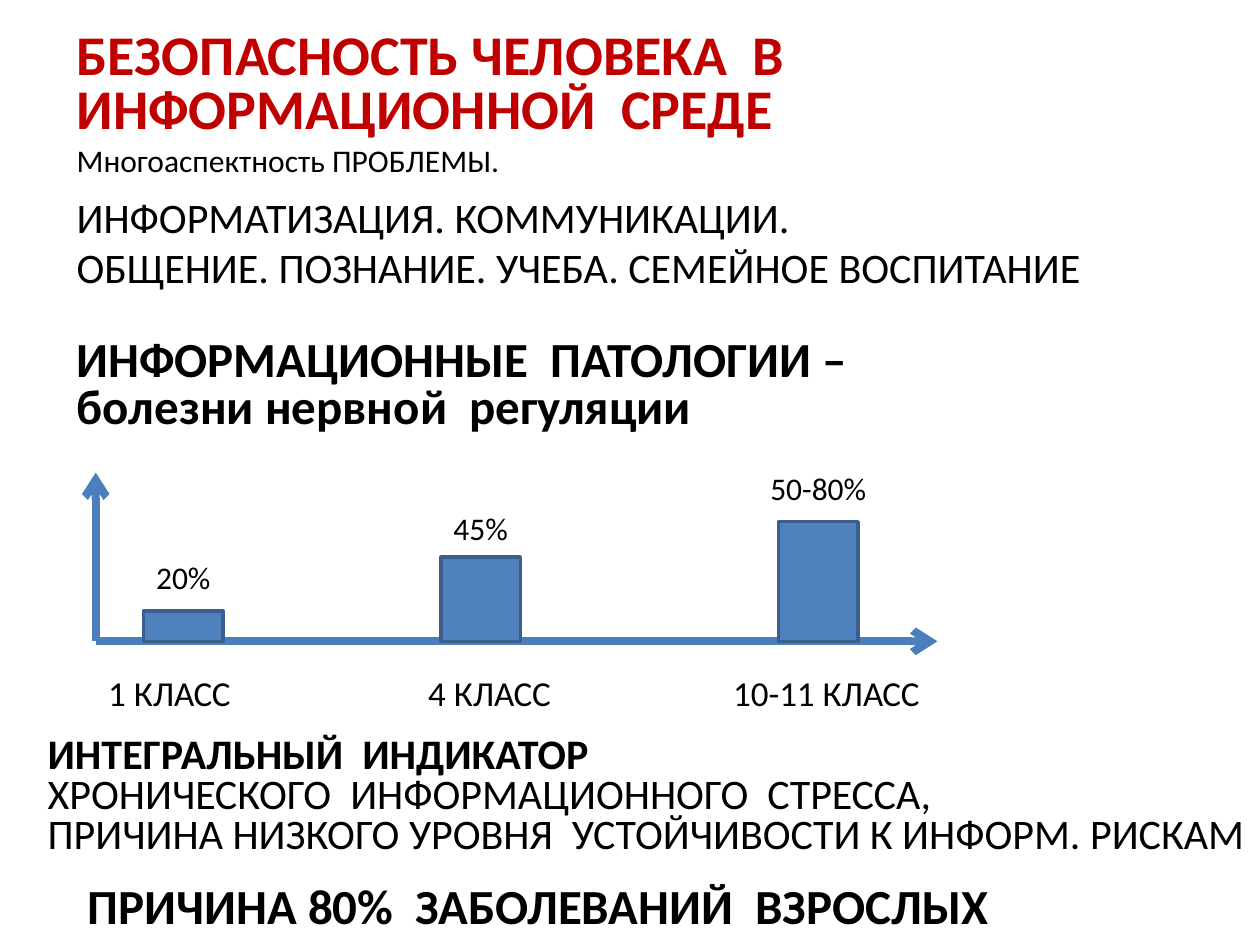
from lxml import etree
from pptx import Presentation
from pptx.dml.color import RGBColor
from pptx.enum import shapes, text
from pptx.oxml.ns import qn
from pptx.util import Inches, Pt

BLACK, RED = "000000", "C00000"
AXIS, BAR_FILL, BAR_LINE = "4B7EBC", "4F81BD", "3A5F8C"

# Content: each paragraph is (text, size, bold, colour, line spacing, space before)
TEXT_BOXES = [
    ((0.51, 0.21, 8.98, 2.58), True, [
        ("БЕЗОПАСНОСТЬ ЧЕЛОВЕКА  В  ИНФОРМАЦИОННОЙ  СРЕДЕ", 32, True, RED, 0.8, 0),
        ("ИНФОРМАТИЗАЦИЯ. КОММУНИКАЦИИ.", 24, False, BLACK, 1, 29.3),
        ("ОБЩЕНИЕ. ПОЗНАНИЕ. УЧЕБА. СЕМЕЙНОЕ ВОСПИТАНИЕ", 24, False, BLACK, 1, 0),
    ]),
    ((0.51, 1.07, 3.71, 0.4), False, [
        ("Многоаспектность ПРОБЛЕМЫ.", 18, False, BLACK, 1, 0),
    ]),
    ((0.51, 2.65, 6.38, 0.86), False, [
        ("ИНФОРМАЦИОННЫЕ  ПАТОЛОГИИ –", 28, True, BLACK, 0.8, 0),
        ("болезни нервной  регуляции", 28, True, BLACK, 0.8, 0),
    ]),
    ((0.28, 5.8, 10.16, 1.07), False, [
        ("ИНТЕГРАЛЬНЫЙ  ИНДИКАТОР", 24, True, BLACK, 0.8, 0),
        ("ХРОНИЧЕСКОГО  ИНФОРМАЦИОННОГО  СТРЕССА,", 24, False, BLACK, 0.8, 0),
        ("ПРИЧИНА НИЗКОГО УРОВНЯ  УСТОЙЧИВОСТИ К ИНФОРМ. РИСКАМ",
         24, False, BLACK, 0.8, 0),
    ]),
    ((0.6, 6.9, 7.43, 0.57), False, [
        ("ПРИЧИНА 80%  ЗАБОЛЕВАНИЙ  ВЗРОСЛЫХ", 28, True, BLACK, 1, 0),
    ]),
]
# Bars: value, left, height, label top, label width
BARS = [
    ("20%", 1.14, 0.24, 4.38, 0.64),
    ("45%", 3.5, 0.67, 3.99, 0.64),
    ("50-80%", 6.18, 0.95, 3.67, 0.97),
]
CLASSES = ["1 КЛАСС", "4 КЛАСС", "10-11 КЛАСС"]
CLASS_TABS = [2.54, 4.96]
ORIGIN_X, ORIGIN_Y = 0.76, 5.09
AXIS_ENDS = [(7.44, ORIGIN_Y), (ORIGIN_X, 3.75)]
BAR_WIDTH = 0.63


def colour(value):
    return RGBColor.from_string(value)


def add_text(slide, box, paragraphs, wrap=False, tabs=(), centred=False):
    frame = slide.shapes.add_textbox(*map(Inches, box)).text_frame
    frame.word_wrap = wrap
    for index, (words, size, bold, ink, spacing, before) in enumerate(paragraphs):
        paragraph = frame.paragraphs[0] if index == 0 else frame.add_paragraph()
        paragraph.text = words
        paragraph.line_spacing = spacing
        if before:
            paragraph.space_before = Pt(before)
        if centred:
            paragraph.alignment = text.PP_ALIGN.CENTER
        if tabs:
            tab_list = etree.SubElement(paragraph._p.get_or_add_pPr(), qn("a:tabLst"))
            for position in tabs:
                etree.SubElement(tab_list, qn("a:tab"), pos=str(Inches(position)), algn="l")
        font = paragraph.font
        font.name, font.size, font.bold = "Calibri", Pt(size), bold
        font.color.rgb = colour(ink)


def add_axis(slide, end):
    axis = slide.shapes.add_connector(
        shapes.MSO_CONNECTOR.STRAIGHT, *map(Inches, (ORIGIN_X, ORIGIN_Y, *end)))
    axis.line.color.rgb = colour(AXIS)
    axis.line.width = Pt(4.5)
    etree.SubElement(axis.line._get_or_add_ln(), qn("a:tailEnd"), type="arrow")
    etree.SubElement(axis._element.spPr, qn("a:effectLst"))


def add_bar(slide, left, height):
    bar = slide.shapes.add_shape(
        shapes.MSO_SHAPE.RECTANGLE,
        *map(Inches, (left, ORIGIN_Y - height, BAR_WIDTH, height)))
    bar.shadow.inherit = False
    bar.fill.solid()
    bar.fill.fore_color.rgb = colour(BAR_FILL)
    bar.line.color.rgb = colour(BAR_LINE)
    bar.line.width = Pt(2)


def main():
    presentation = Presentation()
    presentation.slide_width, presentation.slide_height = Inches(10), Inches(7.5)
    slide = presentation.slides.add_slide(presentation.slide_layouts[6])

    # Headings and statements
    for box, wrap, paragraphs in TEXT_BOXES:
        add_text(slide, box, paragraphs, wrap)

    # Diagram: axes, then bars with their values centred above
    for end in AXIS_ENDS:
        add_axis(slide, end)
    for value, left, height, label_top, label_width in BARS:
        add_bar(slide, left, height)
        label_left = left + (BAR_WIDTH - label_width) / 2
        add_text(slide, (label_left, label_top, label_width, 0.4),
                 [(value, 18, False, BLACK, 1, 0)], centred=True)

    # School classes below the horizontal axis
    add_text(slide, (ORIGIN_X, 5.28, 6.69, 0.44),
             [("\t".join(CLASSES), 20, False, BLACK, 1, 0)], wrap=True, tabs=CLASS_TABS)

    presentation.save("out.pptx")


if __name__ == "__main__":
    main()
